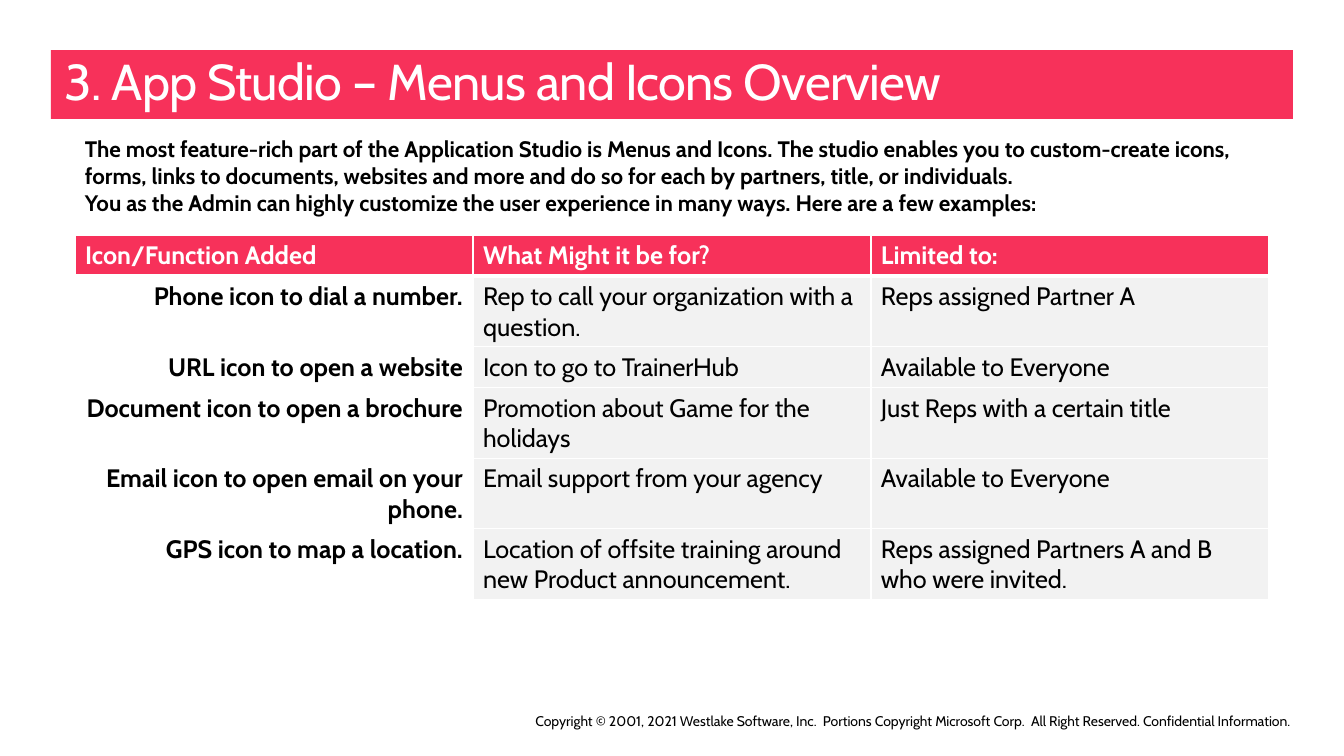
"""Build the Menus and Icons overview slide."""
from lxml import etree
from pptx import Presentation
from pptx.dml.color import RGBColor
from pptx.enum.shapes import MSO_SHAPE
from pptx.enum.text import PP_ALIGN
from pptx.oxml.ns import qn
from pptx.util import Emu, Pt

RECTANGLE = MSO_SHAPE.RECTANGLE
LEFT, RIGHT = PP_ALIGN.LEFT, PP_ALIGN.RIGHT
PINK = RGBColor(0xF7, 0x31, 0x5A)
WHITE = RGBColor(0xFF, 0xFF, 0xFF)
BLACK = RGBColor(0, 0, 0)
GRAY = RGBColor(0xF2, 0xF2, 0xF2)
FONT = "Cabin"

TITLE = "3. App Studio – Menus and Icons Overview"
INTRO = [
    "The most feature-rich part of the Application Studio is Menus and Icons. "
    "The studio enables you to custom-create icons, forms, links to documents, "
    "websites and more and do so for each by partners, title, or individuals.",
    "You as the Admin can highly customize the user experience in many ways. "
    "Here are a few examples:",
]
COPYRIGHT = ("Copyright © 2001, 2021 Westlake Software, Inc.  Portions Copyright "
             "Microsoft Corp.  All Right Reserved. Confidential Information.")
EXAMPLES = [
    ("Icon/Function Added", "What Might it be for?", "Limited to:"),
    ("Phone icon to dial a number.",
     "Rep to call your organization with a question.", "Reps assigned Partner A"),
    ("URL icon to open a website", "Icon to go to TrainerHub", "Available to Everyone"),
    ("Document icon to open a brochure",
     "Promotion about Game for the holidays", "Just Reps with a certain title"),
    ("Email icon to open email on your phone.",
     "Email support from your agency", "Available to Everyone"),
    ("GPS icon to map a location.",
     "Location of offsite training around new Product announcement.",
     "Reps assigned Partners A and B who were invited."),
]

SLIDE_SIZE = (1344, 756)
BANNER_BOX = (51, 50, 1242, 69)
TITLE_BOX = (65, 50, 1215, 61)
INTRO_BOX = (85, 135, 1153, 82)
COPYRIGHT_BOX = (193, 713, 1097, 17)
TABLE_BOX = (75, 235, 1194, 364)
ROW_HEIGHT = 41


def px(length):
    return Emu(round(length * 914400 / 100.8))


def place(box):
    return [px(length) for length in box]


def format_text(paragraph, size, color, bold=False, align=LEFT):
    paragraph.alignment = align
    formats = {"name": FONT, "size": Pt(size), "bold": bold}
    for attribute, value in formats.items():
        setattr(paragraph.font, attribute, value)
    paragraph.font.color.rgb = color


def add_text(slide, box, lines, size, color, bold=False, align=LEFT):
    frame = slide.shapes.add_textbox(*place(box)).text_frame
    margins = dict.fromkeys(
        ("margin_left", "margin_top", "margin_right", "margin_bottom"), 0)
    for attribute, value in {**margins, "word_wrap": True}.items():
        setattr(frame, attribute, value)
    frame.text = "\n".join(lines)
    for paragraph in frame.paragraphs:
        format_text(paragraph, size, color, bold, align)
    return frame


def add_borders(cell, top, bottom):
    properties = cell._tc.get_or_add_tcPr()
    for side, width in {"L": 1, "R": 1, "T": top, "B": bottom}.items():
        line = etree.SubElement(properties, qn(f"a:ln{side}"), w=str(Pt(width)))
        fill = etree.SubElement(line, qn("a:solidFill"))
        etree.SubElement(fill, qn("a:srgbClr"), val=str(WHITE))


def add_examples(slide):
    frame = slide.shapes.add_table(
        len(EXAMPLES), len(EXAMPLES[0]), *place(TABLE_BOX))
    table = frame.table
    table.horz_banding = False
    for row, texts in enumerate(EXAMPLES):
        table.rows[row].height = px(ROW_HEIGHT)
        header = row == 0
        for column, text in enumerate(texts):
            label = column == 0
            cell = table.cell(row, column)
            cell.text = text
            format_text(cell.text_frame.paragraphs[0], 18,
                        WHITE if header else BLACK, header or label,
                        RIGHT if label and not header else LEFT)
            add_borders(cell, 3 if row == 1 else 1, 3 if header else 1)
            cell.fill.solid()
            cell.fill.fore_color.rgb = PINK if header else WHITE if label else GRAY
    frame.height = px(TABLE_BOX[3])


def main():
    deck = Presentation()
    deck.slide_width, deck.slide_height = place(SLIDE_SIZE)
    slide = deck.slides.add_slide(deck.slide_layouts[6])

    banner = slide.shapes.add_shape(RECTANGLE, *place(BANNER_BOX))
    banner.shadow.inherit = False
    banner.fill.solid()
    banner.fill.fore_color.rgb = PINK
    banner.line.fill.background()

    title = add_text(slide, TITLE_BOX, [TITLE], 36, WHITE)
    title.paragraphs[0].runs[0]._r.get_or_add_rPr().set("spc", "-50")
    add_text(slide, INTRO_BOX, INTRO, 16, BLACK, bold=True)
    add_text(slide, COPYRIGHT_BOX, [COPYRIGHT], 10, BLACK, align=RIGHT)
    add_examples(slide)
    deck.save("out.pptx")


if __name__ == "__main__":
    main()
